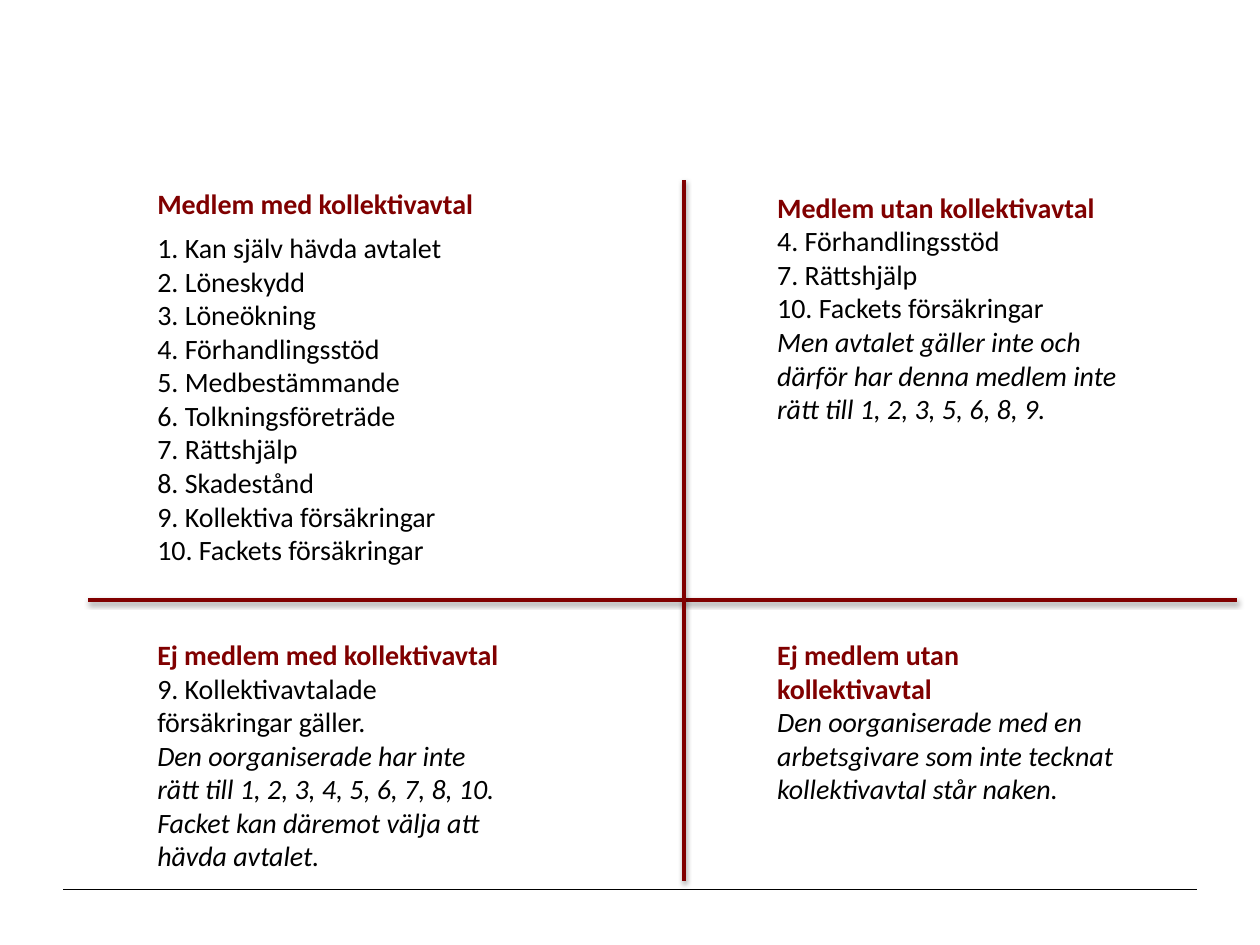
from lxml import etree
from pptx import Presentation
from pptx.dml.color import RGBColor
from pptx.enum.shapes import MSO_CONNECTOR
from pptx.enum.text import MSO_ANCHOR
from pptx.oxml.ns import qn
from pptx.util import Inches, Pt

STRAIGHT = MSO_CONNECTOR.STRAIGHT
TOP = MSO_ANCHOR.TOP
COLORS = {"head": "800000", "text": "000000", "page": "FFFFFF"}
FONT = "Calibri"

# Each quadrant: box, heading, plain lines, italic lines, space after heading
QUADS = [
    ((1.15, 1.43, 3.89, 4.59), "Medlem med kollektivavtal",
     ["1. Kan själv hävda avtalet", "2. Löneskydd", "3. Löneökning",
      "4. Förhandlingsstöd", "5. Medbestämmande", "6. Tolkningsföreträde",
      "7. Rättshjälp", "8. Skadestånd", "9. Kollektiva försäkringar",
      "10. Fackets försäkringar"], [], 6),
    ((1.15, 5.01, 2.96, 1.99), "Ej medlem med kollektivavtal",
     ["9. Kollektivavtalade försäkringar gäller."],
     ["Den oorganiserade har inte rätt till 1, 2, 3, 4, 5, 6, 7, 8, 10.",
      "Facket kan däremot välja att hävda avtalet."], 0),
    ((6.07, 5.01, 2.89, 1.45), "Ej medlem utan kollektivavtal", [],
     ["Den oorganiserade med en arbetsgivare som inte tecknat "
      "kollektivavtal står naken."], 0),
    ((6.07, 1.46, 2.89, 1.99), "Medlem utan kollektivavtal",
     ["4. Förhandlingsstöd", "7. Rättshjälp", "10. Fackets försäkringar"],
     ["Men avtalet gäller inte och därför har denna medlem inte rätt till "
      "1, 2, 3, 5, 6, 8, 9."], 0),
]


def rgb(name):
    return RGBColor.from_string(COLORS[name])


def add_line(slide, start, end, color, width, shadow=False):
    line = slide.shapes.add_connector(
        STRAIGHT, *(Inches(v) for v in (*start, *end)))
    line.line.color.rgb = rgb(color)
    line.line.width = Pt(width)
    effects = etree.SubElement(line._element.spPr, qn("a:effectLst"))
    if shadow:
        outer = etree.SubElement(
            effects, qn("a:outerShdw"), blurRad=str(Pt(3.1)),
            dist=str(Pt(1.6)), dir="5400000", rotWithShape="0")
        tint = etree.SubElement(outer, qn("a:srgbClr"), val=COLORS["text"])
        etree.SubElement(tint, qn("a:alpha"), val="38000")


def add_quad(slide, box, head, plain, italic, gap):
    frame = slide.shapes.add_textbox(*(Inches(v) for v in box)).text_frame
    frame.word_wrap = True
    frame.vertical_anchor = TOP
    rows = [(head, "head", True, False)]
    rows += [(text, "text", False, False) for text in plain]
    rows += [(text, "text", False, True) for text in italic]
    for i, (text, color, bold, slant) in enumerate(rows):
        para = frame.add_paragraph() if i else frame.paragraphs[0]
        para.space_after = Pt(0 if i else gap)
        run = para.add_run()
        run.text = text
        font = run.font
        font.name, font.size = FONT, Pt(16)
        font.bold, font.italic = bold, slant
        font.color.rgb = rgb(color)


def add_cross(slide, left, top, right, bottom, mid_x, mid_y):
    add_line(slide, (left, mid_y), (right, mid_y), "head", 2, True)
    add_line(slide, (mid_x, bottom), (mid_x, top), "head", 2, True)


def main():
    deck = Presentation()
    deck.slide_width, deck.slide_height = Inches(10), Inches(7.5)
    slide = deck.slides.add_slide(deck.slide_layouts[6])
    fill = slide.background.fill
    fill.solid()
    fill.fore_color.rgb = rgb("page")
    add_line(slide, (0.5, 7.06), (9.5, 7.06), "text", 0.25)
    for quad in QUADS:
        add_quad(slide, *quad)
    add_cross(slide, 0.7, 1.43, 9.82, 6.99, 5.43, 4.76)
    deck.save("out.pptx")


if __name__ == "__main__":
    main()
